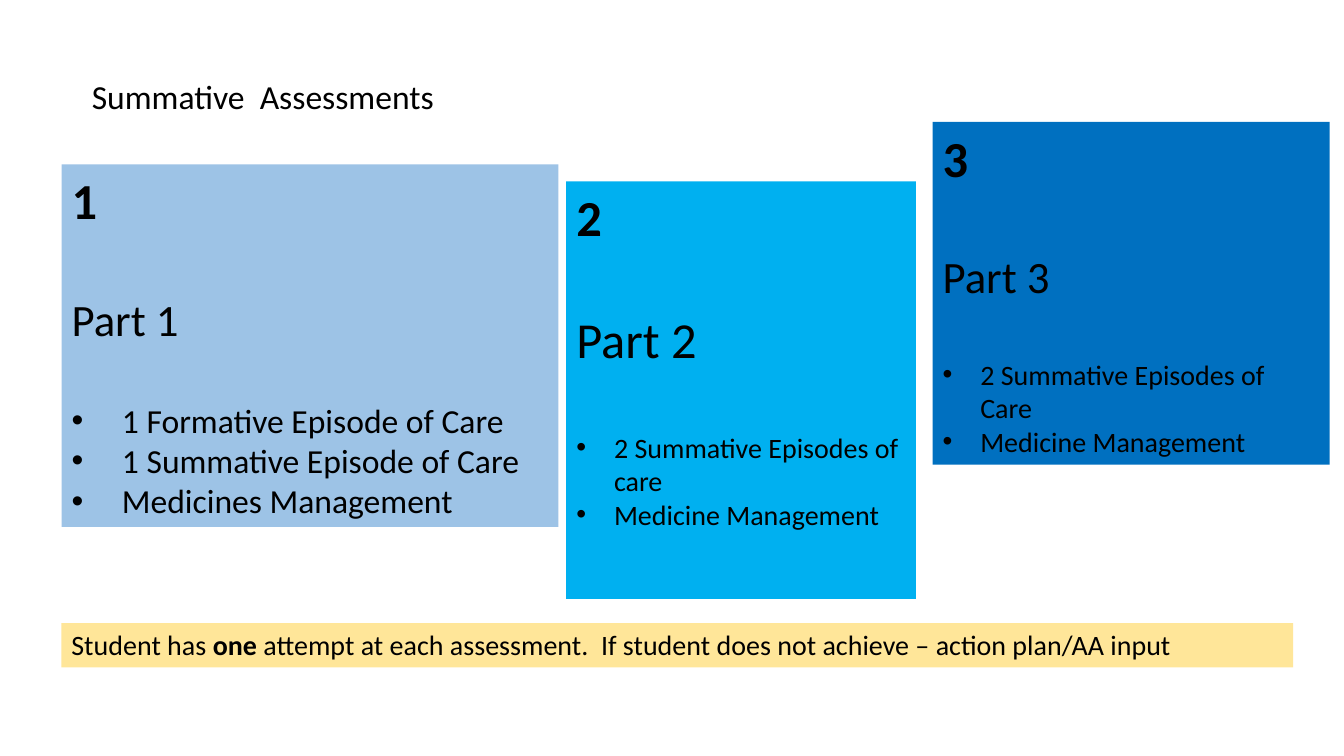
from dataclasses import dataclass

from lxml.etree import SubElement
from pptx import Presentation
from pptx.dml.color import RGBColor
from pptx.enum.shapes import MSO_SHAPE
from pptx.enum.text import MSO_ANCHOR, MSO_AUTO_SIZE, PP_ALIGN
from pptx.oxml.ns import qn
from pptx.util import Cm, Pt

COLOURS = {
    "text": "000000",
    "part 1": "9DC3E6",
    "part 2": "00B0F0",
    "part 3": "0070C0",
    "note": "FFE699",
}
FONT = "Calibri"
LINE_HEIGHT = 1.22
NUMBER_SIZE = 36


@dataclass
class Box:
    left: float
    top: float
    width: float
    height: float


@dataclass
class Card:
    number: int
    box: Box
    heading_size: int
    item_size: int
    indent: float
    items: list[str]


CARDS = [
    Card(1, Box(1.55, 4.14, 12.52, 9.14), 32, 24, 1.27,
         ["1 Formative Episode of Care", "1 Summative Episode of Care", "Medicines Management"]),
    Card(2, Box(14.27, 4.57, 8.81, 10.52), 36, 20, 0.95,
         ["2 Summative Episodes of care", "Medicine Management"]),
    Card(3, Box(23.5, 3.07, 10.01, 8.64), 32, 20, 0.95,
         ["2 Summative Episodes of Care", "Medicine Management"]),
]


def place(shape, box: Box) -> None:
    shape.left, shape.top = Cm(box.left), Cm(box.top)
    shape.width, shape.height = Cm(box.width), Cm(box.height)
    frame = shape.text_frame
    frame.word_wrap = True
    frame.auto_size = MSO_AUTO_SIZE.NONE
    frame.vertical_anchor = MSO_ANCHOR.TOP


def fill(shape, colour: str) -> None:
    shape.fill.solid()
    shape.fill.fore_color.rgb = RGBColor.from_string(COLOURS[colour])
    shape.line.fill.background()


def format_paragraph(paragraph, size: int, bold: bool = False, space_after: float = 0) -> None:
    paragraph.alignment = PP_ALIGN.LEFT
    paragraph.space_before = Pt(0)
    paragraph.space_after = Pt(space_after)
    for run in paragraph.runs:
        run.font.name = FONT
        run.font.size = Pt(size)
        run.font.bold = bold
        run.font.color.rgb = RGBColor.from_string(COLOURS["text"])


def set_bullet(paragraph, indent: float) -> None:
    properties = paragraph._p.get_or_add_pPr()
    properties.set("marL", str(Cm(indent)))
    properties.set("indent", str(-Cm(indent)))
    if indent:
        SubElement(properties, qn("a:buFont")).set("typeface", "Arial")
        SubElement(properties, qn("a:buChar")).set("char", "•")
    else:
        SubElement(properties, qn("a:buNone"))


def draw_card(shape, card: Card) -> None:
    place(shape, card.box)
    fill(shape, f"part {card.number}")
    frame = shape.text_frame
    frame.text = "\n".join([str(card.number), f"Part {card.number}", *card.items])
    number, heading, *items = frame.paragraphs
    format_paragraph(number, NUMBER_SIZE, True, NUMBER_SIZE * LINE_HEIGHT)
    format_paragraph(heading, card.heading_size, False, card.heading_size * LINE_HEIGHT)
    for paragraph in (number, heading):
        set_bullet(paragraph, 0)
    for paragraph in items:
        format_paragraph(paragraph, card.item_size)
        set_bullet(paragraph, card.indent)


def draw_note(slide, box: Box) -> None:
    note = slide.shapes.add_shape(MSO_SHAPE.RECTANGLE, 0, 0, 0, 0)
    note.shadow.inherit = False
    place(note, box)
    fill(note, "note")
    paragraph = note.text_frame.paragraphs[0]
    for text in ("Student has ", "one",
                 " attempt at each assessment.  If student does not achieve – action plan/AA input"):
        paragraph.add_run().text = text
    format_paragraph(paragraph, 20)
    paragraph.runs[1].font.bold = True


def main() -> None:
    presentation = Presentation()
    presentation.slide_width, presentation.slide_height = Cm(33.87), Cm(19.05)
    slide = presentation.slides.add_slide(presentation.slide_layouts.get_by_name("Comparison"))

    title = slide.shapes.title
    place(title, Box(2.06, 1.78, 28.14, 1.27))
    title.text_frame.text = "Summative  Assessments"
    format_paragraph(title.text_frame.paragraphs[0], 24)

    _, *bodies, spare = slide.placeholders
    for body, card in zip(bodies, CARDS):
        draw_card(body, card)
    spare.element.getparent().remove(spare.element)

    draw_note(slide, Box(1.55, 15.7, 31.04, 1.12))
    presentation.save("out.pptx")


if __name__ == "__main__":
    main()
